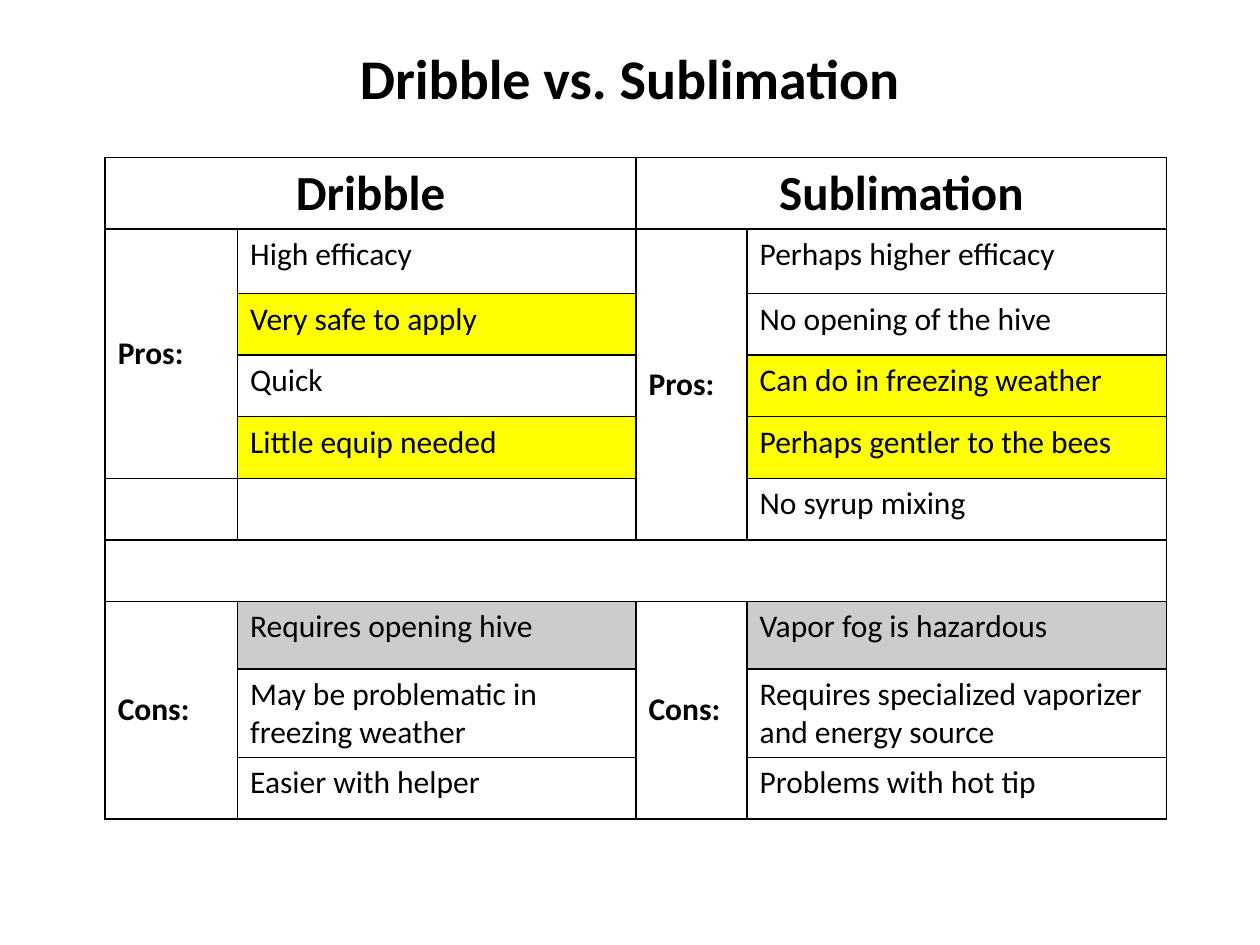
"""Build the Dribble vs. Sublimation comparison slide."""
from lxml import etree
from pptx import Presentation
from pptx.dml.color import RGBColor
from pptx.enum.text import MSO_ANCHOR, PP_ALIGN
from pptx.oxml.ns import qn
from pptx.util import Cm, Pt

CENTER, LEFT = PP_ALIGN.CENTER, PP_ALIGN.LEFT
MIDDLE, TOP = MSO_ANCHOR.MIDDLE, MSO_ANCHOR.TOP
COLORS = {"text": "000000", "line": "000000", "plain": "FFFFFF",
          "pro": "FFFF00", "con": "CCCCCC"}
TITLE = {"size": Pt(32), "bold": True}
HEADER = {"size": Pt(28), "bold": True}
LABEL = {"size": Pt(18), "bold": True}
BODY = {"size": Pt(18), "bold": False}


def write(tf, text, fmt, align=LEFT):
    p = tf.paragraphs[0]
    p.alignment = align
    r = p.add_run()
    r.text = text
    for name, value in {"name": "Calibri", **fmt}.items():
        setattr(r.font, name, value)
    r.font.color.rgb = RGBColor.from_string(COLORS["text"])
    return p


def add_borders(cell):
    tcPr = cell._tc.get_or_add_tcPr()
    for side in ("a:lnL", "a:lnR", "a:lnT", "a:lnB"):
        ln = etree.SubElement(tcPr, qn(side), w=str(Pt(1)))
        fill = etree.SubElement(ln, qn("a:solidFill"))
        etree.SubElement(fill, qn("a:srgbClr"), val=COLORS["line"])


prs = Presentation()
prs.slide_width, prs.slide_height = Cm(25.4), Cm(19.05)
s = prs.slides.add_slide(prs.slide_layouts[6])

tf = s.shapes.add_textbox(Cm(1.27), Cm(0.76), Cm(22.86), Cm(1.78)).text_frame
for name, value in {"word_wrap": True, "vertical_anchor": MIDDLE, "margin_left": 0,
                    "margin_right": 0, "margin_top": 0, "margin_bottom": 0}.items():
    setattr(tf, name, value)
write(tf, "Dribble vs. Sublimation", TITLE, CENTER).line_spacing = 0.87

widths = [2.67, 8.03, 2.24, 8.46]
heights = [1.24, 1.3] + [1.24] * 5 + [1.37] + [1.24] * 2
table = s.shapes.add_table(len(heights), len(widths), Cm(2.12), Cm(3.18),
                           Cm(sum(widths)), Cm(sum(heights))).table
table.first_row = table.horz_banding = False
for column, width in zip(table.columns, widths):
    column.width = Cm(width)
for row, height in zip(table.rows, heights):
    row.height = Cm(height)

fills = {(2, 1): "pro", (4, 1): "pro", (3, 3): "pro", (4, 3): "pro",
         (7, 1): "con", (7, 3): "con"}
for i in range(len(heights)):
    for j in range(len(widths)):
        cell = table.cell(i, j)
        add_borders(cell)
        cell.fill.solid()
        cell.fill.fore_color.rgb = RGBColor.from_string(COLORS[fills.get((i, j), "plain")])
        cell.text_frame.paragraphs[0].font.size = Pt(18)

merges = [
    (0, 0, 0, 1, "Dribble", HEADER, CENTER, TOP),
    (0, 2, 0, 3, "Sublimation", HEADER, CENTER, TOP),
    (1, 0, 4, 0, "Pros:", LABEL, LEFT, MIDDLE),
    (1, 2, 5, 2, "Pros:", LABEL, LEFT, MIDDLE),
    (6, 0, 6, 3, "", BODY, LEFT, TOP),
    (7, 0, 9, 0, "Cons:", LABEL, LEFT, MIDDLE),
    (7, 2, 9, 2, "Cons:", LABEL, LEFT, MIDDLE),
]
for top, left, bottom, right, text, fmt, align, anchor in merges:
    cell = table.cell(top, left)
    cell.merge(table.cell(bottom, right))
    cell.vertical_anchor = anchor
    if text:
        write(cell.text_frame, text, fmt, align)

points = {
    (1, 1): ["High efficacy", "Very safe to apply", "Quick", "Little equip needed"],
    (1, 3): ["Perhaps higher efficacy", "No opening of the hive",
             "Can do in freezing weather", "Perhaps gentler to the bees",
             "No syrup mixing"],
    (7, 1): ["Requires opening hive", "May be problematic in freezing weather",
             "Easier with helper"],
    (7, 3): ["Vapor fog is hazardous", "Requires specialized vaporizer and energy source",
             "Problems with hot tip"],
}
for (top, col), texts in points.items():
    for i, text in enumerate(texts, top):
        write(table.cell(i, col).text_frame, text, BODY)

prs.save("out.pptx")
